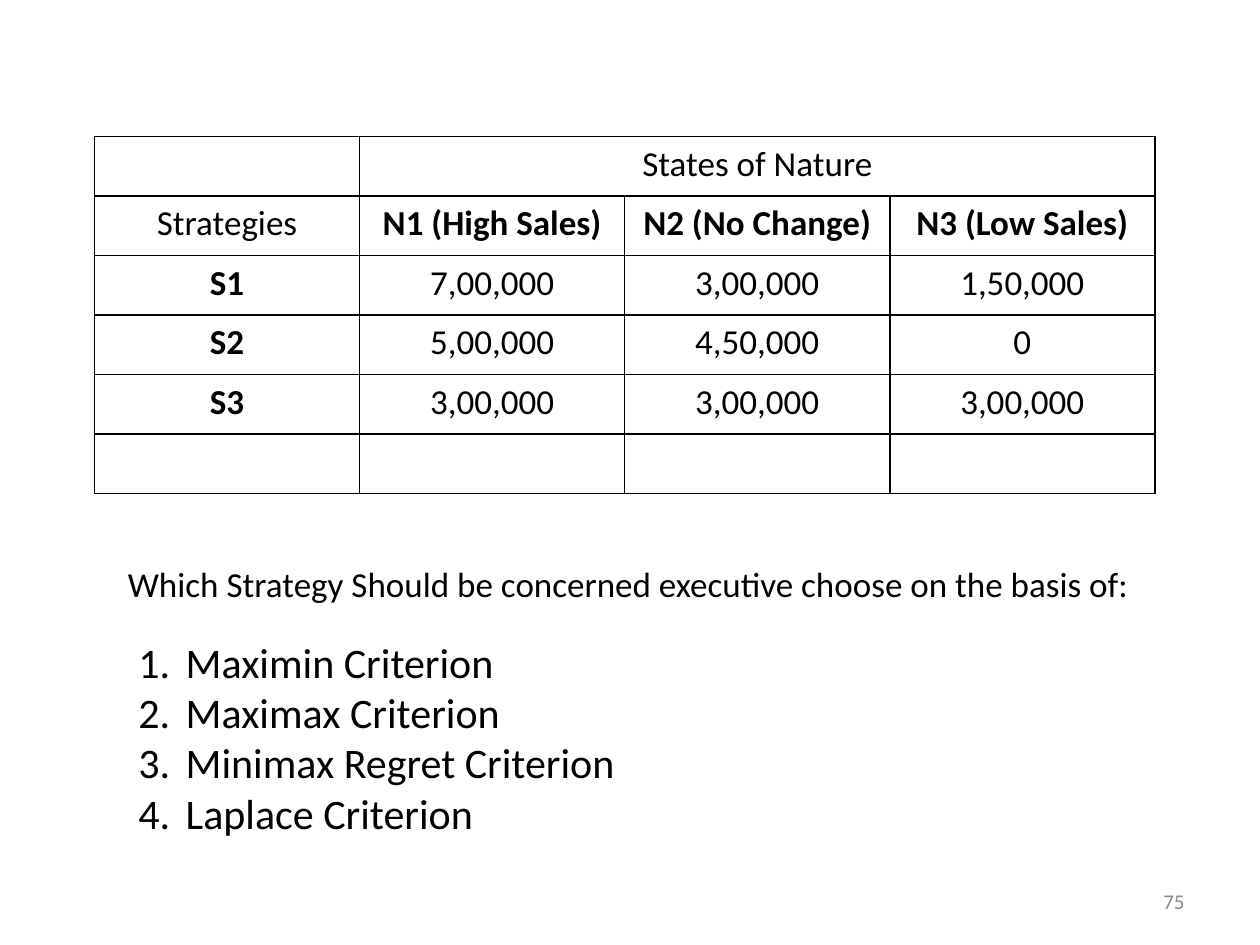
from lxml.etree import SubElement
from pptx import Presentation
from pptx.dml.color import RGBColor
from pptx.enum.text import MSO_ANCHOR, MSO_AUTO_SIZE, PP_ALIGN
from pptx.oxml.ns import qn
from pptx.util import Pt

PAYOFFS = [
    ["", "States of Nature", "", ""],
    ["Strategies", "N1 (High Sales)", "N2 (No Change)", "N3 (Low Sales)"],
    ["S1", "7,00,000", "3,00,000", "1,50,000"],
    ["S2", "5,00,000", "4,50,000", "0"],
    ["S3", "3,00,000", "3,00,000", "3,00,000"],
    ["", "", "", ""],
]
BOLD = {"N1 (High Sales)", "N2 (No Change)", "N3 (Low Sales)", "S1", "S2", "S3"}
QUESTION = "Which Strategy Should be concerned executive choose on the basis of:"
CRITERIA = ["Maximin Criterion", "Maximax Criterion",
            "Minimax Regret Criterion", "Laplace Criterion"]
PAGE_NUMBER = "75"

BLACK, GREY = "000000", "8C8C8C"
COLUMN_WIDTH, ROW_HEIGHT = 151.5, 34
NUMBER_INDENT = 27


def paint(target, colour):
    target.rgb = RGBColor.from_string(colour)


def write(paragraph, text, size, colour=BLACK, bold=False, align=PP_ALIGN.LEFT):
    paragraph.alignment = align
    run = paragraph.add_run()
    run.text = text
    for name, value in {"size": Pt(size), "name": "Calibri", "bold": bold}.items():
        setattr(run.font, name, value)
    paint(run.font.color, colour)


def border(cell):
    properties = cell._tc.get_or_add_tcPr()
    for position, side in enumerate(("lnL", "lnR", "lnT", "lnB")):
        line = properties.makeelement(qn(f"a:{side}"), {"w": str(Pt(1))})
        fill = SubElement(line, qn("a:solidFill"))
        SubElement(fill, qn("a:srgbClr"), val=BLACK)
        properties.insert(position, line)


def add_payoffs(slide):
    rows, columns = len(PAYOFFS), len(PAYOFFS[0])
    payoffs = slide.shapes.add_table(
        rows, columns, Pt(54), Pt(78),
        Pt(columns * COLUMN_WIDTH), Pt(rows * ROW_HEIGHT)).table
    payoffs.first_row = payoffs.horz_banding = False
    payoffs.cell(0, 1).merge(payoffs.cell(0, columns - 1))
    for r, values in enumerate(PAYOFFS):
        for c, value in enumerate(values):
            cell = payoffs.cell(r, c)
            cell.fill.background()
            border(cell)
            if value:
                write(cell.text_frame.paragraphs[0], value, 20,
                      bold=value in BOLD, align=PP_ALIGN.CENTER)


def add_text(slide, bounds, lines, size, frame_format, **style):
    frame = slide.shapes.add_textbox(*map(Pt, bounds)).text_frame
    for name, value in frame_format.items():
        setattr(frame, name, value)
    for i, line in enumerate(lines):
        paragraph = frame.add_paragraph() if i else frame.paragraphs[0]
        write(paragraph, line, size, **style)
    return frame


def number(paragraph):
    properties = paragraph._p.get_or_add_pPr()
    properties.set("marL", str(Pt(NUMBER_INDENT)))
    properties.set("indent", str(Pt(-NUMBER_INDENT)))
    SubElement(properties, qn("a:buFont"), typeface="+mj-lt")
    SubElement(properties, qn("a:buAutoNum"), type="arabicPeriod")


def main():
    deck = Presentation()
    deck.slide_width, deck.slide_height = Pt(720), Pt(540)
    slide = deck.slides.add_slide(deck.slide_layouts[6])
    add_payoffs(slide)
    grow = MSO_AUTO_SIZE.SHAPE_TO_FIT_TEXT
    add_text(slide, (66, 318, 596, 31.5), [QUESTION], 20,
             {"word_wrap": False, "auto_size": grow})
    criteria = add_text(slide, (72, 360, 588, 124), CRITERIA, 24,
                        {"word_wrap": True, "auto_size": grow})
    for paragraph in criteria.paragraphs:
        number(paragraph)
    add_text(slide, (516, 500.5, 168, 28.75), [PAGE_NUMBER], 12,
             {"word_wrap": True, "vertical_anchor": MSO_ANCHOR.MIDDLE},
             colour=GREY, align=PP_ALIGN.RIGHT)
    deck.save("out.pptx")


if __name__ == "__main__":
    main()
